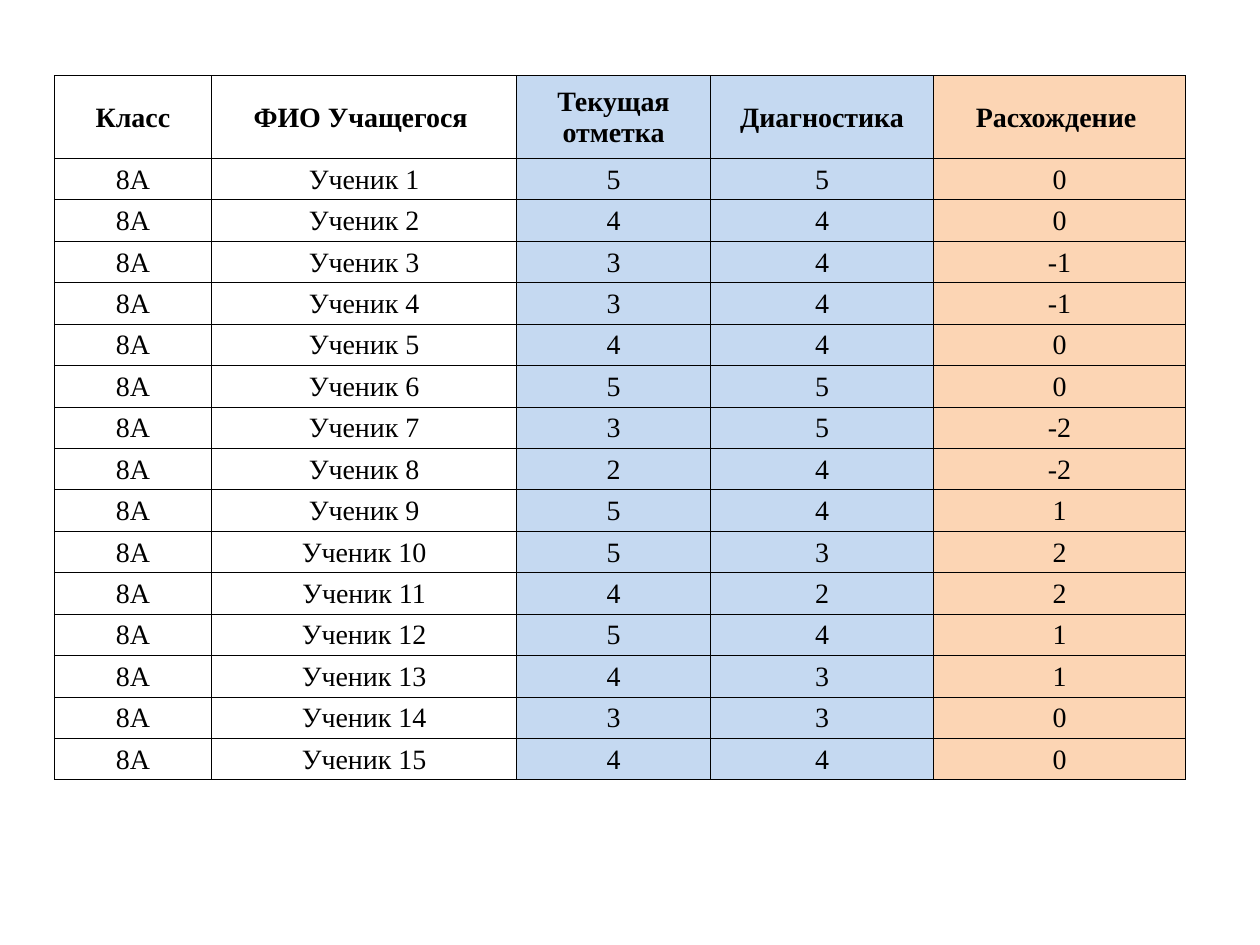
from lxml import etree
from pptx import Presentation
from pptx.dml.color import RGBColor
from pptx.enum.text import MSO_ANCHOR, PP_ALIGN
from pptx.oxml.ns import qn
from pptx.util import Inches, Pt

CENTER = PP_ALIGN.CENTER
MIDDLE = MSO_ANCHOR.MIDDLE
WIDE, HIGH = Inches(10), Inches(7.5)
FONT = "Times New Roman"
INK, BLUE, PEACH = "000000", "C5D9F1", "FCD5B4"
HEADS = ["Класс", "ФИО Учащегося ", "Текущая отметка", "Диагностика", "Расхождение "]
FILLS = [None, None, BLUE, BLUE, PEACH]
SHARES = [0.125, 0.242, 0.154, 0.177, 0.2]
MARKS = [
    (5, 5), (4, 4), (3, 4), (3, 4), (4, 4),
    (5, 5), (3, 5), (2, 4), (5, 4), (5, 3),
    (4, 2), (5, 4), (4, 3), (3, 3), (4, 4),
]


def color(code):
    return RGBColor.from_string(code)


def border(cell):
    props = cell._tc.get_or_add_tcPr()
    for side in ("lnL", "lnR", "lnT", "lnB"):
        line = etree.SubElement(props, qn(f"a:{side}"), w=str(Pt(0.5)))
        fill = etree.SubElement(line, qn("a:solidFill"))
        etree.SubElement(fill, qn("a:srgbClr"), val=INK)


def paint(cell, fill):
    if fill:
        cell.fill.solid()
        cell.fill.fore_color.rgb = color(fill)
    else:
        cell.fill.background()


def write(cell, text, bold):
    cell.vertical_anchor = MIDDLE
    cell.margin_left = cell.margin_right = cell.margin_top = Inches(0.01)
    cell.margin_bottom = 0
    para = cell.text_frame.paragraphs[0]
    para.alignment = CENTER
    run = para.add_run()
    run.text = text
    run.font.name = FONT
    run.font.size = Pt(16)
    run.font.bold = bold
    run.font.color.rgb = color(INK)


def pupils():
    for num, (mark, test) in enumerate(MARKS, 1):
        yield ["8А", f"Ученик {num}", str(mark), str(test), str(mark - test)]


def add_grades(slide):
    rows = [HEADS, *pupils()]
    unit = Inches(5.59) // (len(rows) + 1)
    frame = slide.shapes.add_table(
        len(rows), len(HEADS), int(WIDE * 0.043), int(HIGH * 0.08),
        int(WIDE * sum(SHARES)), unit * (len(rows) + 1))
    table = frame.table
    table.horz_banding = False
    for col, share in zip(table.columns, SHARES):
        col.width = int(WIDE * share)
    for r, texts in enumerate(rows):
        table.rows[r].height = unit if r else unit * 2
        for c, (text, fill) in enumerate(zip(texts, FILLS)):
            cell = table.cell(r, c)
            border(cell)
            paint(cell, fill)
            write(cell, text, r == 0)


def main():
    deck = Presentation()
    deck.slide_width, deck.slide_height = WIDE, HIGH
    slide = deck.slides.add_slide(deck.slide_layouts[6])
    add_grades(slide)
    deck.save("out.pptx")


if __name__ == "__main__":
    main()
